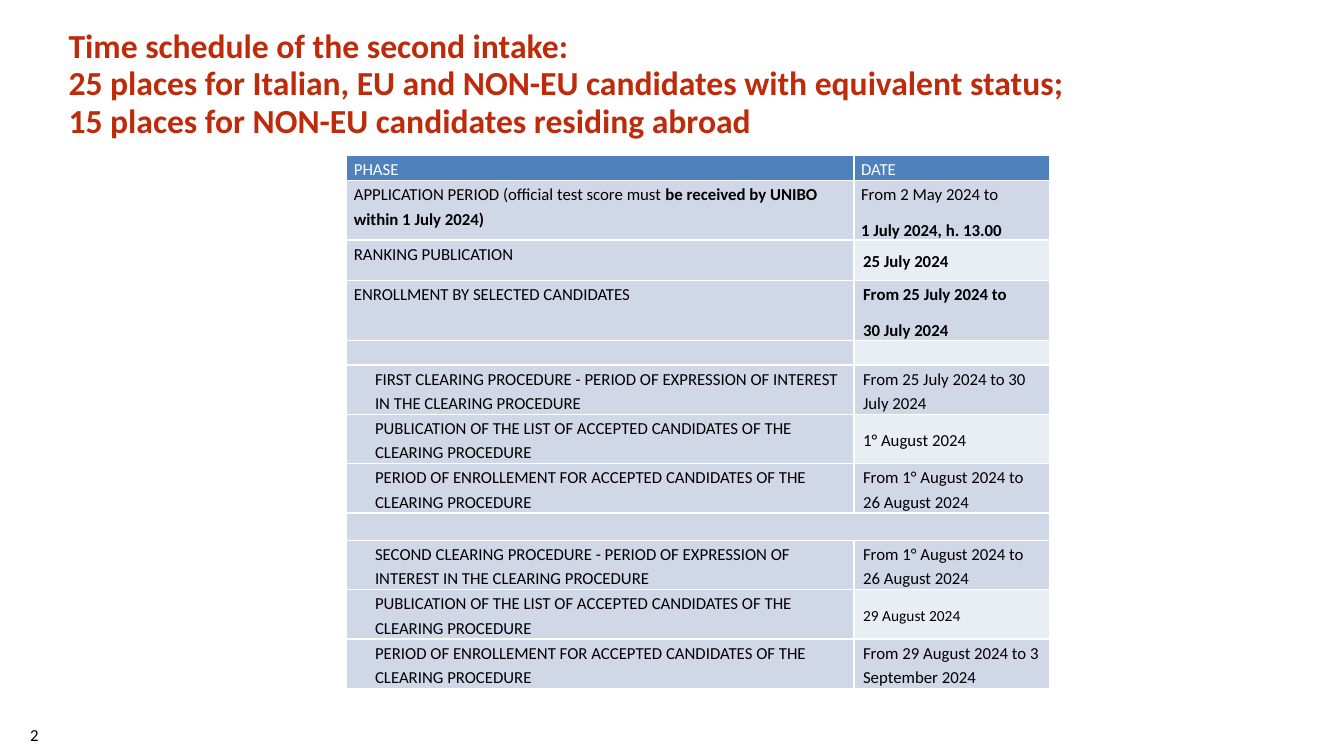
"""Build the slide with the time schedule of the second intake."""
from lxml.etree import SubElement
from pptx import Presentation
from pptx.dml.color import RGBColor
from pptx.enum.text import MSO_ANCHOR as Anchor, MSO_AUTO_SIZE as AutoSize, PP_ALIGN as Align
from pptx.oxml.ns import qn
from pptx.util import Inches, Pt

RED = RGBColor(0xBD, 0x2B, 0x0B)
BLACK = RGBColor(0x00, 0x00, 0x00)
WHITE = RGBColor(0xFF, 0xFF, 0xFF)
BLUE = RGBColor(0x4F, 0x81, 0xBD)
PALE_BLUE = RGBColor(0xD0, 0xD8, 0xE8)
PALE_GREY = RGBColor(0xE9, 0xED, 0xF4)

TITLE = [
    "Time schedule of the second intake:",
    "25 places for Italian, EU and NON-EU candidates with equivalent status;",
    "15 places for NON-EU candidates residing abroad",
]
EXPRESSION = "CLEARING PROCEDURE - PERIOD OF EXPRESSION OF INTEREST IN THE CLEARING PROCEDURE"
PUBLICATION = "PUBLICATION OF THE LIST OF ACCEPTED CANDIDATES OF THE CLEARING PROCEDURE"
ENROLLMENT = "PERIOD OF ENROLLEMENT FOR ACCEPTED CANDIDATES OF THE CLEARING PROCEDURE"
BOLD_MARK = "|"
SCHEDULE = [
    (0.25, "PHASE", ["DATE"]),
    (0.59, "APPLICATION PERIOD (official test score must |be received by UNIBO within 1 July 2024)",
     ["From 2 May 2024 to", "|1 July 2024, h. 13.00"]),
    (0.40, "RANKING PUBLICATION", ["|25 July 2024"]),
    (0.60, "ENROLLMENT BY SELECTED CANDIDATES", ["|From 25 July 2024 to", "|30 July 2024"]),
    (0.24, "", [""]),
    (0.49, f"FIRST {EXPRESSION}", ["From 25 July 2024 to 30 July 2024"]),
    (0.49, PUBLICATION, ["1° August 2024"]),
    (0.49, ENROLLMENT, ["From 1° August 2024 to 26 August 2024"]),
    (0.27, "", [""]),
    (0.49, f"SECOND {EXPRESSION}", ["From 1° August 2024 to 26 August 2024"]),
    (0.49, PUBLICATION, ["29 August 2024"]),
    (0.49, ENROLLMENT, ["From 29 August 2024 to 3 September 2024"]),
]
GREY_DATE_ROWS = (2, 4, 6, 10)
MERGED_ROW = 8
SMALL_DATE_ROW = 10
FIRST_CLEARING_ROW = 5


def add_text(p, text, *, size=12, color=BLACK, bold=False):
    """Add one formatted run to a paragraph."""
    r = p.add_run()
    r.text = text
    r.font.name = "Calibri"
    r.font.size = Pt(size)
    r.font.bold = bold
    r.font.color.rgb = color


def paragraphs(tf, count):
    """Return the given number of paragraphs of a text frame."""
    return [tf.paragraphs[0]] + [tf.add_paragraph() for _ in range(count - 1)]


def add_title(s):
    """Place and fill the title."""
    sp = s.shapes.title
    sp.left, sp.top, sp.width, sp.height = map(Inches, (0.58, 0.29, 12.28, 1.18))
    tf = sp.text_frame
    tf.auto_size = AutoSize.NONE
    tf.vertical_anchor = Anchor.TOP
    for i, (p, line) in enumerate(zip(paragraphs(tf, len(TITLE)), TITLE)):
        p.alignment = Align.LEFT
        p.line_spacing = Pt(22)
        p.space_before = Pt(4.8 if i else 0)
        add_text(p, line, size=24, color=RED, bold=True)


def add_page_number(s):
    """Add the page number at the bottom left."""
    box = s.shapes.add_textbox(*map(Inches, (0.2, 7.14, 0.87, 0.3)))
    box.text_frame.word_wrap = True
    add_text(box.text_frame.paragraphs[0], "2")


def add_borders(cell):
    """Give a cell white borders."""
    tc_pr = cell._tc.get_or_add_tcPr()
    for side in "LRTB":
        ln = SubElement(tc_pr, qn(f"a:ln{side}"), w=str(Pt(1)))
        SubElement(SubElement(ln, qn("a:solidFill")), qn("a:srgbClr"), val=str(WHITE))


def fill_cell(cell, lines, *, fill, color=BLACK, size=12, indent=0.0, anchor=Anchor.TOP):
    """Format a cell and write its paragraphs, bold after the mark."""
    add_borders(cell)
    cell.fill.solid()
    cell.fill.fore_color.rgb = fill
    cell.margin_left = cell.margin_right = Inches(0.07)
    cell.margin_top = cell.margin_bottom = 0
    cell.vertical_anchor = anchor
    for p, line in zip(paragraphs(cell.text_frame, len(lines)), lines):
        p.line_spacing = 1.2
        p.space_after = Pt(8)
        p._p.get_or_add_pPr().set("marL", str(Inches(indent)))
        regular, _, strong = line.partition(BOLD_MARK)
        for text, bold in ((regular, False), (strong, True)):
            if text:
                add_text(p, text, size=size, color=color, bold=bold)
        if not line:
            SubElement(p._p, qn("a:endParaRPr"), sz=str(size * 100))


def add_schedule(s):
    """Add the table of phases and dates."""
    height = sum(row[0] for row in SCHEDULE)
    frame = s.shapes.add_table(len(SCHEDULE), 2, Inches(3.44), Inches(1.54), Inches(6.97), Inches(height))
    table = frame.table
    for column, width in zip(table.columns, (5.03, 1.94)):
        column.width = Inches(width)
    for i, (row_height, phase, dates) in enumerate(SCHEDULE):
        table.rows[i].height = Inches(row_height)
        if i == 0:
            for j, lines in enumerate(([phase], dates)):
                fill_cell(table.cell(i, j), lines, fill=BLUE, color=WHITE)
            continue
        fill_cell(table.cell(i, 0), [phase], fill=PALE_BLUE,
                  indent=0.21 if i >= FIRST_CLEARING_ROW else 0)
        fill_cell(table.cell(i, 1), dates, anchor=Anchor.MIDDLE,
                  fill=PALE_GREY if i in GREY_DATE_ROWS else PALE_BLUE,
                  size=11 if i == SMALL_DATE_ROW else 12,
                  indent=0.02 if i > 1 else 0)
    table.cell(MERGED_ROW, 0).merge(table.cell(MERGED_ROW, 1))


def main():
    """Build and save the presentation."""
    prs = Presentation()
    prs.slide_width, prs.slide_height = Inches(13.33), Inches(7.5)
    s = prs.slides.add_slide(prs.slide_layouts[5])
    add_page_number(s)
    add_title(s)
    add_schedule(s)
    prs.save("out.pptx")


if __name__ == "__main__":
    main()
